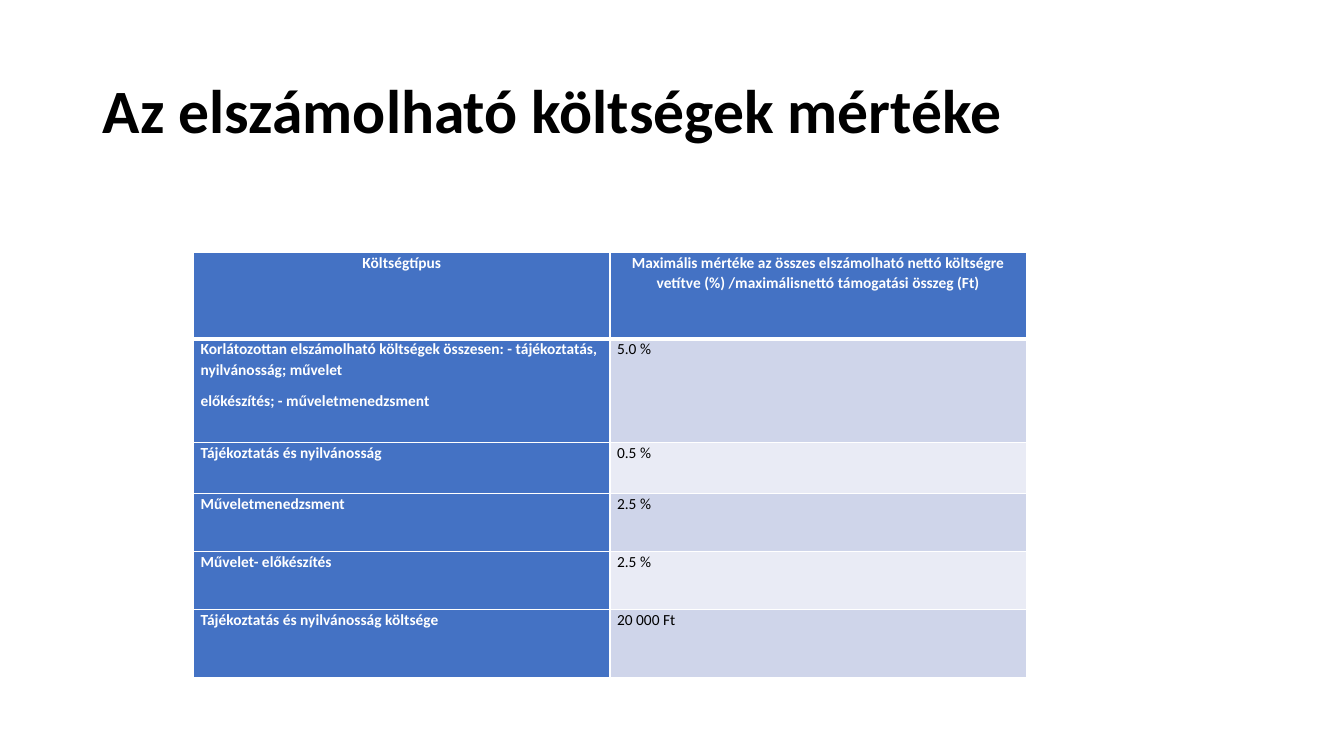
from lxml import etree
from pptx import Presentation
from pptx import util as u
from pptx.dml.color import RGBColor
from pptx.enum import text
from pptx.oxml import ns

EMU_PER_PX = 9144  # 100 px to the inch
COLUMN_WIDTHS = [413, 413]
ROW_HEIGHTS = [86, 103, 51, 57, 58, 67]
COSTS = [
    (["Költségtípus"],
     ["Maximális mértéke az összes elszámolható nettó költségre vetítve (%) "
      "/maximálisnettó támogatási összeg (Ft)"]),
    (["Korlátozottan elszámolható költségek összesen: - tájékoztatás, nyilvánosság; művelet",
      "előkészítés; - műveletmenedzsment"], ["5.0 %"]),
    (["Tájékoztatás és nyilvánosság"], ["0.5 %"]),
    (["Műveletmenedzsment"], ["2.5 %"]),
    (["Művelet- előkészítés"], ["2.5 %"]),
    (["Tájékoztatás és nyilvánosság költsége"], ["20 000 Ft"]),
]


def px(length):
    return u.Emu(length * EMU_PER_PX)


def color(value):
    return RGBColor.from_string(value)


class SlideBuilder:
    FONT = "Calibri"
    BLACK, WHITE, BLUE = "000000", "FFFFFF", "4472C4"
    BANDS = ["E9EBF5", "CFD5EA"]

    def __init__(self, page):
        self.page = page

    def add_span(self, para, words, size, ink, bold):
        span = para.add_run()
        span.text = words
        span.font.name = self.FONT
        span.font.size = u.Pt(size)
        span.font.bold = bold
        span.font.color.rgb = color(ink)

    def add_title(self, words, left, top, width, height):
        box = self.page.shapes.title
        box.left, box.top, box.width, box.height = map(px, (left, top, width, height))
        frame = box.text_frame
        frame.word_wrap = True
        frame.vertical_anchor = text.MSO_ANCHOR.MIDDLE
        para = frame.paragraphs[0]
        para.alignment = text.PP_ALIGN.LEFT
        para.line_spacing = 0.9
        self.add_span(para, words, 44, self.BLACK, True)

    def add_table(self, rows, left, top, widths, heights):
        frame = self.page.shapes.add_table(
            len(rows), len(widths), px(left), px(top), px(sum(widths)), px(sum(heights)))
        table = frame.table
        for column, width in zip(table.columns, widths):
            column.width = px(width)
        for row, height in zip(table.rows, heights):
            row.height = px(height)
        for r, row in enumerate(rows):
            for c, lines in enumerate(row):
                self.fill_cell(table.cell(r, c), lines, r, c)

    def fill_cell(self, cell, lines, r, c):
        is_heading = r == 0 or c == 0
        cell.margin_left = cell.margin_right = px(7)
        cell.margin_top = cell.margin_bottom = 0
        cell.vertical_anchor = text.MSO_ANCHOR.TOP
        cell.fill.solid()
        cell.fill.fore_color.rgb = color(self.BLUE if is_heading else self.BANDS[r % 2])
        self.add_borders(cell, top=3 if r == 1 else 1, bottom=3 if r == 0 else 1)
        for i, line in enumerate(lines):
            para = cell.text_frame.add_paragraph() if i else cell.text_frame.paragraphs[0]
            para.alignment = text.PP_ALIGN.CENTER if r == 0 else text.PP_ALIGN.LEFT
            para.line_spacing = 1.07
            para.space_after = u.Pt(8)
            self.add_span(para, line, 11, self.WHITE if is_heading else self.BLACK, is_heading)

    def add_borders(self, cell, top, bottom):
        """Put white lines before the fill, as the schema orders them."""
        properties = cell._tc.get_or_add_tcPr()
        sides = [("lnL", 1), ("lnR", 1), ("lnT", top), ("lnB", bottom)]
        for position, (side, points) in enumerate(sides):
            line = etree.Element(ns.qn(f"a:{side}"), w=str(u.Pt(points)))
            fill = etree.SubElement(line, ns.qn("a:solidFill"))
            etree.SubElement(fill, ns.qn("a:srgbClr"), val=self.WHITE)
            properties.insert(position, line)


def main():
    deck = Presentation()
    deck.slide_width, deck.slide_height = px(1333), px(750)
    builder = SlideBuilder(deck.slides.add_slide(deck.slide_layouts[5]))
    builder.add_title("Az elszámolható költségek mértéke", 92, 40, 1150, 145)
    builder.add_table(COSTS, 192, 250, COLUMN_WIDTHS, ROW_HEIGHTS)
    deck.save("out.pptx")


if __name__ == "__main__":
    main()
